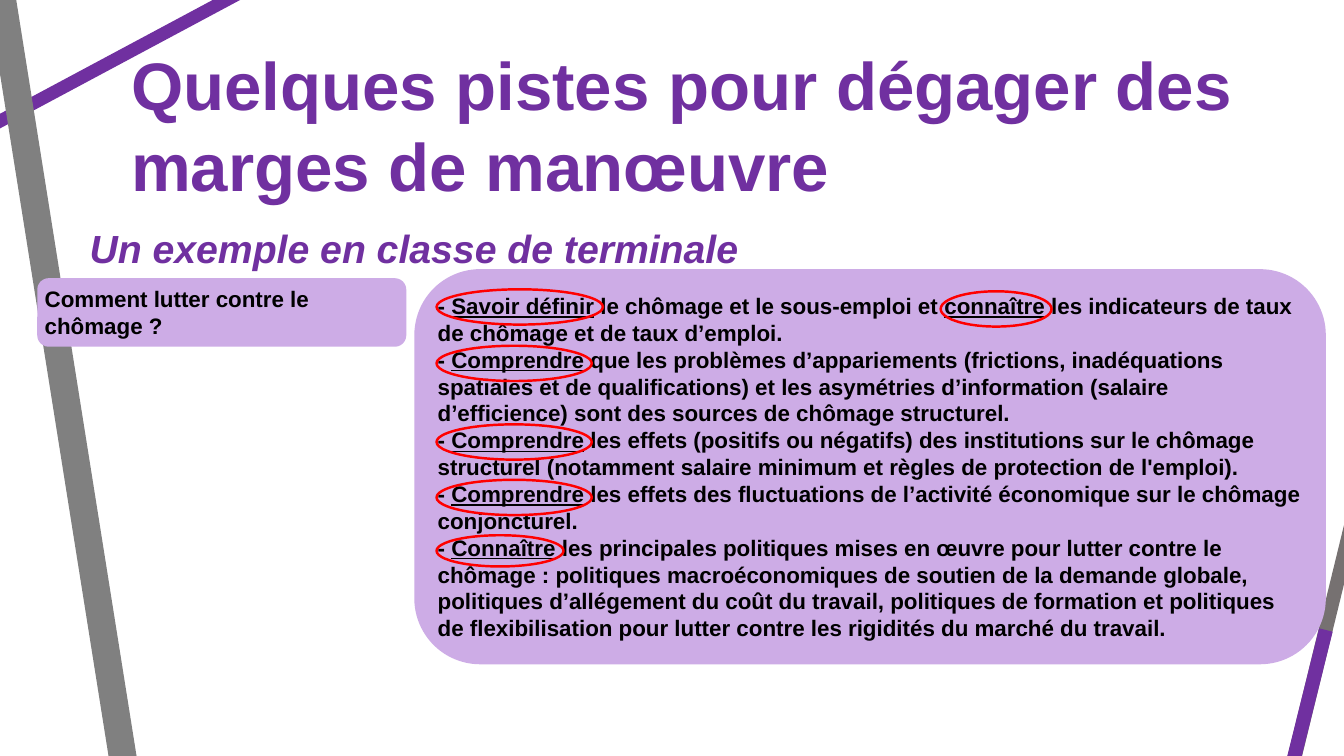
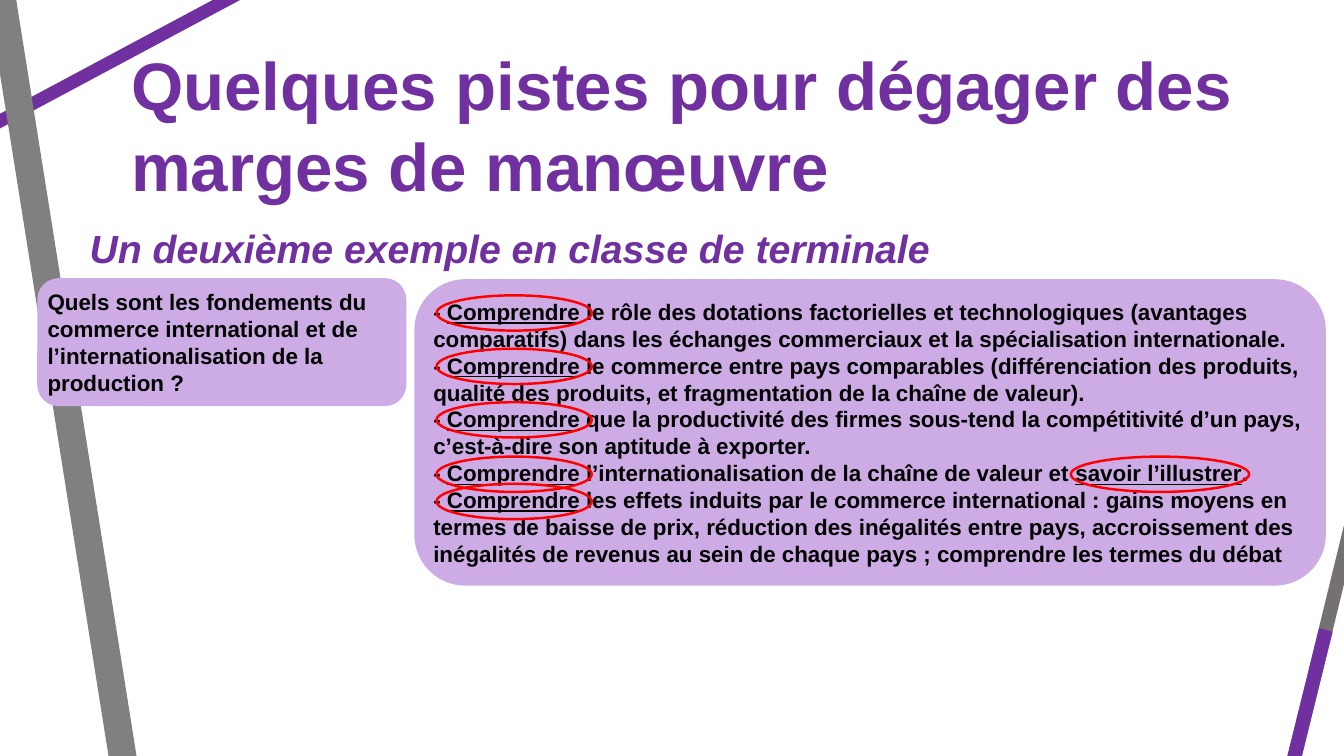
import dataclasses

import pptx
import pptx.dml.color
import pptx.enum.shapes
import pptx.enum.text
import pptx.oxml.ns
import pptx.util
import lxml.etree

Inches, Pt = pptx.util.Inches, pptx.util.Pt
Shapes = pptx.enum.shapes.MSO_SHAPE
Align = pptx.enum.text.PP_ALIGN
Anchor = pptx.enum.text.MSO_ANCHOR


def colour(value):
    return pptx.dml.color.RGBColor.from_string(value)


@dataclasses.dataclass(frozen=True)
class Theme:
    font: str = "Arial"
    purple: str = "7030A0"
    lilac: str = "CDACE6"
    grey: str = "808080"
    dark_grey: str = "767171"
    red: str = "FF0000"
    black: str = "000000"
    title_size: float = 48
    subtitle_size: float = 28
    body_size: float = 16
    leading: float = 1.2
    ring_width: float = 1.75


theme = Theme()


def write(frame, lines, size, text_colour, inset=(0.04, 0.04), anchor=Anchor.TOP,
          align=Align.LEFT, italic=False):
    """Fill a text frame; words between underscores are underlined."""
    frame.word_wrap = True
    frame.auto_size = pptx.enum.text.MSO_AUTO_SIZE.NONE
    frame.vertical_anchor = anchor
    frame.margin_left = frame.margin_right = Inches(inset[0])
    frame.margin_top = frame.margin_bottom = Inches(inset[1])
    for number, line in enumerate(lines):
        para = frame.add_paragraph() if number else frame.paragraphs[0]
        para.alignment = align
        para.line_spacing = Pt(size * theme.leading)
        for position, words in enumerate(line.split("_")):
            span = para.add_run()
            span.text = words
            span.font.name = theme.font
            span.font.size = Pt(size)
            span.font.bold = True
            span.font.italic = italic
            span.font.underline = position % 2 == 1
            span.font.color.rgb = colour(text_colour)


title = "Quelques pistes pour dégager des marges de manœuvre"

# Diagonal bands: start, end, colour, width in points
bands = [
    ((-2.09, 2.32), (5.16, -1.56), theme.purple, 9.25),
    ((0, -0.14), (1.26, 7.78), theme.grey, 19.75),
    ((12.26, 9.89), (13.65, 4.19), theme.dark_grey, 10),
    ((12.18, 10.15), (13.15, 6.25), theme.purple, 10),
]

# Rings: left, top, width, height
ring_left, verb_width, ring_height = 4.33, 1.54, 0.35

examples = [
    {
        "subtitle": "Un exemple en classe de terminale",
        "question": "Comment lutter contre le chômage ?",
        "question_height": 0.68,
        "goals_top": 2.67,
        "goals_height": 3.92,
        "goals": [
            "- _Savoir définir_ le chômage et le sous-emploi et _connaître_ les indicateurs de taux "
            "de chômage et de taux d’emploi.",
            "- _Comprendre_ que les problèmes d’appariements (frictions, inadéquations spatiales et "
            "de qualifications) et les asymétries d’information (salaire d’efficience) sont des "
            "sources de chômage structurel.",
            "- _Comprendre_ les effets (positifs ou négatifs) des institutions sur le chômage "
            "structurel (notamment salaire minimum et règles de protection de l'emploi).",
            "- _Comprendre_ les effets des fluctuations de l’activité économique sur le chômage "
            "conjoncturel.",
            "- _Connaître_ les principales politiques mises en œuvre pour lutter contre le chômage : "
            "politiques macroéconomiques de soutien de la demande globale, politiques d’allégement "
            "du coût du travail, politiques de formation et politiques de flexibilisation pour "
            "lutter contre les rigidités du marché du travail.",
        ],
        "verb_tops": [3.43, 4.21, 4.76],
        "other_rings": [
            (ring_left, 2.87, 1.65, ring_height),
            (ring_left, 5.31, 1.26, 0.31),
            (9.33, 2.89, 1.1, ring_height),
        ],
    },
    {
        "subtitle": "Un deuxième exemple en classe de terminale",
        "question": "Quels sont les fondements du commerce international et de "
                    "l’internationalisation de la production ?",
        "question_height": 1.27,
        "goals_top": 2.77,
        "goals_height": 3.04,
        "goals": [
            "- _Comprendre_ le rôle des dotations factorielles et technologiques (avantages "
            "comparatifs) dans les échanges commerciaux et la spécialisation internationale.",
            "- _Comprendre_ le commerce entre pays comparables (différenciation des produits, "
            "qualité des produits, et fragmentation de la chaîne de valeur).",
            "- _Comprendre_ que la productivité des firmes sous-tend la compétitivité d’un pays, "
            "c’est-à-dire son aptitude à exporter.",
            "- _Comprendre_ l’internationalisation de la chaîne de valeur et _savoir l’illustrer_.",
            "- _Comprendre_ les effets induits par le commerce international : gains moyens en "
            "termes de baisse de prix, réduction des inégalités entre pays, accroissement des "
            "inégalités de revenus au sein de chaque pays ; comprendre les termes du débat",
        ],
        "verb_tops": [2.93, 3.46, 3.99, 4.53, 4.8],
        "other_rings": [(10.62, 4.53, 1.77, ring_height)],
    },
]

deck = pptx.Presentation()
deck.slide_width, deck.slide_height = Inches(13.33), Inches(7.5)
layout = deck.slide_layouts.get_by_name("Title Only")
pages = [deck.slides.add_slide(layout) for example in examples]

# Shared bands: drawn once, then moved to the layout
for number, (start, end, band_colour, width) in enumerate(bands):
    band = pages[0].shapes.add_connector(
        pptx.enum.shapes.MSO_CONNECTOR.STRAIGHT, *map(Inches, start + end))
    band.line.color.rgb = colour(band_colour)
    band.line.width = Pt(width)
    properties = band.element.find(pptx.oxml.ns.qn("p:spPr"))
    lxml.etree.SubElement(properties, pptx.oxml.ns.qn("a:effectLst"))
    band.element.xpath("./p:nvCxnSpPr/p:cNvPr")[0].set("id", str(100 + number))
    layout.shapes.element.append(band.element)

for page, example in zip(pages, examples):
    # Title and subtitle
    heading = page.shapes.title
    heading.left, heading.top, heading.width, heading.height = map(
        Inches, (1.26, 0.39, 11.71, 1.68))
    write(heading.text_frame, [title], theme.title_size, theme.purple)
    subtitle = page.shapes.add_textbox(*map(Inches, (0.79, 2.18, 12.2, 0.57)))
    write(subtitle.text_frame, [example["subtitle"]], theme.subtitle_size, theme.purple,
          inset=(0.1, 0.05), align=Align.JUSTIFY, italic=True)

    # Question on the left, learning goals on the right
    panels = [
        ((0.37, 2.76, 3.66, example["question_height"]), [example["question"]]),
        ((4.11, example["goals_top"], 9.04, example["goals_height"]), example["goals"]),
    ]
    for place, lines in panels:
        panel = page.shapes.add_shape(Shapes.ROUNDED_RECTANGLE, *map(Inches, place))
        panel.shadow.inherit = False
        panel.fill.solid()
        panel.fill.fore_color.rgb = colour(theme.lilac)
        panel.line.fill.background()
        write(panel.text_frame, lines, theme.body_size, theme.black, anchor=Anchor.MIDDLE)

    # Rings around the key verbs
    verb_rings = [(ring_left, top, verb_width, ring_height) for top in example["verb_tops"]]
    for place in verb_rings + example["other_rings"]:
        ring = page.shapes.add_shape(Shapes.OVAL, *map(Inches, place))
        ring.shadow.inherit = False
        ring.fill.background()
        ring.line.color.rgb = colour(theme.red)
        ring.line.width = Pt(theme.ring_width)

deck.save("out.pptx")
